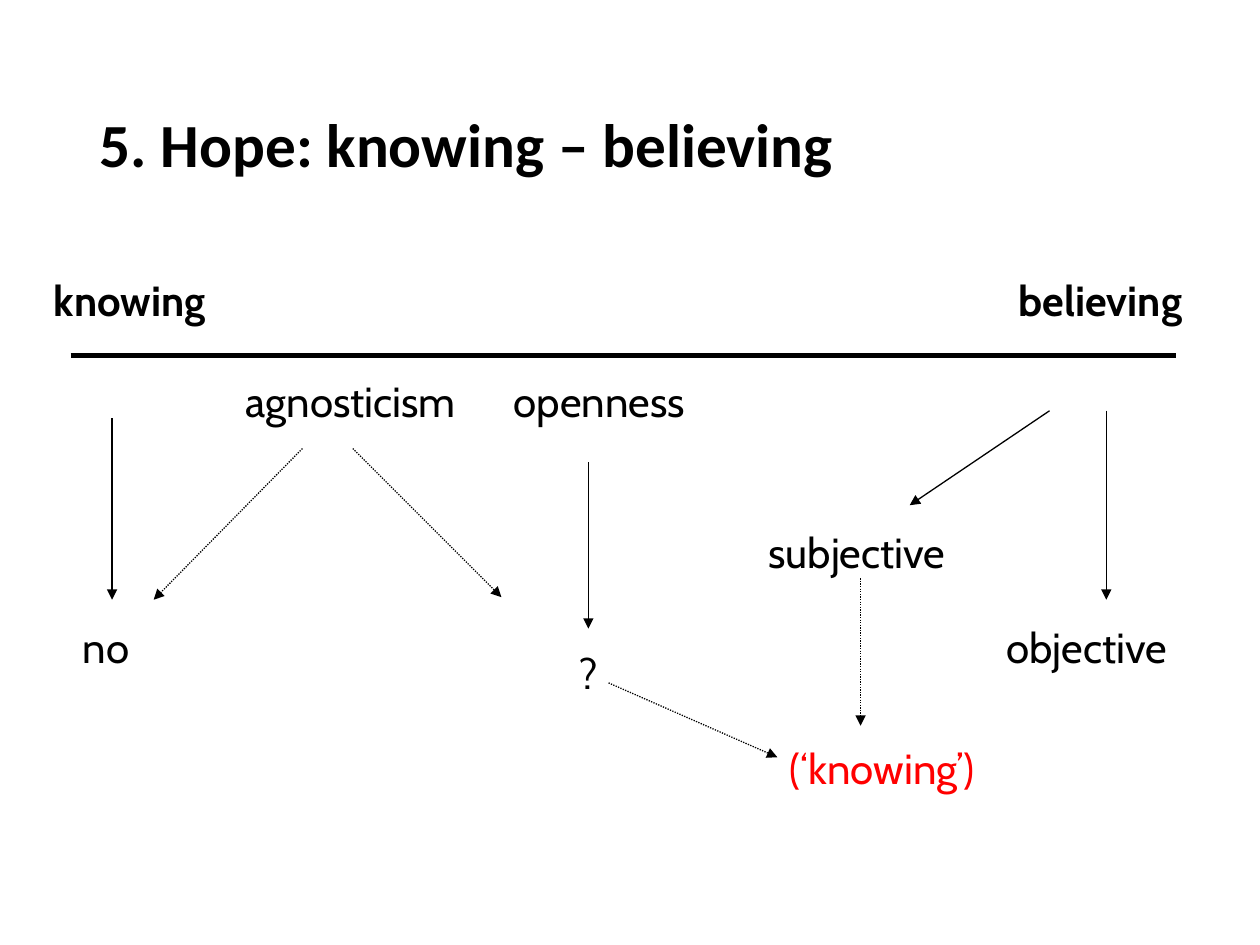
"""Build the slide "5. Hope: knowing – believing" as a diagram of labels and arrows."""
from lxml.etree import SubElement
from pptx import Presentation
from pptx.dml.color import RGBColor
from pptx.enum.dml import MSO_LINE_DASH_STYLE as DASH
from pptx.enum.shapes import MSO_CONNECTOR
from pptx.enum.text import MSO_ANCHOR, PP_ALIGN
from pptx.oxml.ns import qn
from pptx.util import Inches, Pt

COLORS = {"ink": "000000", "accent": "FF0000"}


def style(p, font, size, color="ink", bold=False, align=PP_ALIGN.LEFT):
    p.alignment = align
    p.font.name = font
    p.font.size = Pt(size)
    p.font.bold = bold
    p.font.color.rgb = RGBColor.from_string(COLORS[color])


def add_line(x1, y1, x2, y2, width):
    line = s.shapes.add_connector(
        MSO_CONNECTOR.STRAIGHT, Inches(x1), Inches(y1), Inches(x2), Inches(y2))
    line.line.color.rgb = RGBColor.from_string(COLORS["ink"])
    line.line.width = Pt(width)
    SubElement(line._element.spPr, qn("a:effectLst"))
    return line


prs = Presentation()
prs.slide_width, prs.slide_height = Inches(10), Inches(7.5)
s = prs.slides.add_slide(prs.slide_layouts[5])

title = s.shapes.title
title.left, title.top = Inches(0.69), Inches(0.38)
title.width, title.height = Inches(8.62), Inches(1.45)
tf = title.text_frame
tf.text = "5. Hope: knowing – believing"
tf.vertical_anchor = MSO_ANCHOR.MIDDLE
p = tf.paragraphs[0]
p.line_spacing = 1.1
style(p, "Calibri", 35, bold=True)

add_line(0.56, 2.82, 9.33, 2.82, 3)

labels = [
    ("knowing", 0.33, 2.13, 1.67, {"bold": True}),
    ("believing", 7.67, 2.13, 1.81, {"bold": True, "align": PP_ALIGN.RIGHT}),
    ("agnosticism", 1.85, 2.93, 2.12, {}),
    ("openness", 3.98, 2.93, 1.73, {}),
    ("no", 0.56, 4.88, 1.22, {}),
    ("?", 4.5, 5.09, 0.56, {}),
    ("subjective", 6, 4.13, 2.44, {}),
    ("objective", 7.89, 4.88, 2.11, {}),
    ("(‘knowing’)", 6.17, 5.84, 2.11, {"color": "accent"}),
]
for text, x, y, width, options in labels:
    box = s.shapes.add_textbox(Inches(x), Inches(y), Inches(width), Inches(0.5))
    tf = box.text_frame
    tf.word_wrap = True
    tf.text = text
    style(tf.paragraphs[0], "Cabin", 24, **options)

arrows = [
    (0.89, 3.32, 0.89, 4.76, DASH.SOLID),
    (4.67, 3.67, 4.67, 4.99, DASH.SOLID),
    (8.33, 3.26, 7.22, 4.01, DASH.SOLID),
    (8.78, 3.26, 8.78, 4.76, DASH.SOLID),
    (2.4, 3.56, 1.22, 4.76, DASH.ROUND_DOT),
    (2.8, 3.56, 3.98, 4.74, DASH.ROUND_DOT),
    (6.83, 4.59, 6.83, 5.76, DASH.ROUND_DOT),
    (4.83, 5.42, 6.17, 6.01, DASH.ROUND_DOT),
]
for x1, y1, x2, y2, dash in arrows:
    arrow = add_line(x1, y1, x2, y2, 0.75)
    arrow.line.dash_style = dash
    SubElement(arrow.line._get_or_add_ln(), qn("a:tailEnd"), type="triangle")

prs.save("out.pptx")
